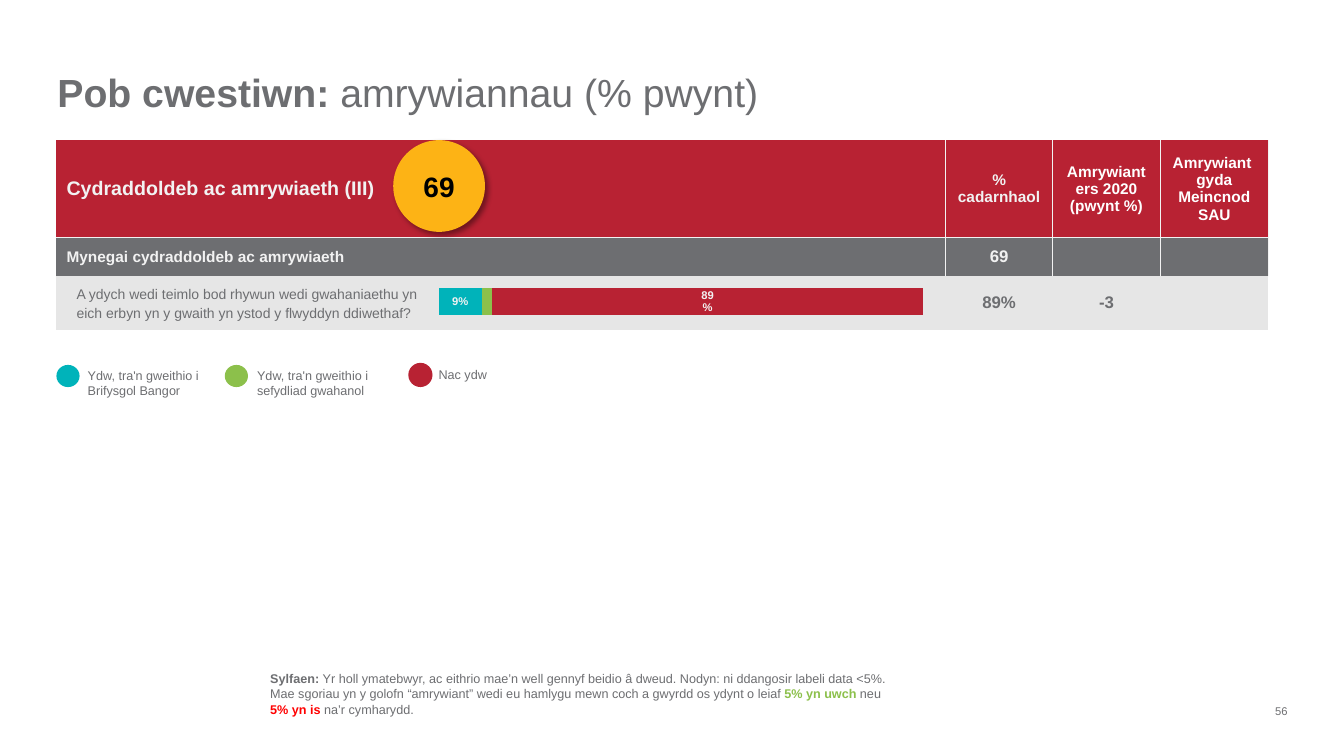
from dataclasses import dataclass

from lxml.etree import SubElement
from pptx import Presentation
from pptx.chart.data import CategoryChartData
from pptx.dml.color import RGBColor
from pptx.enum.chart import XL_CHART_TYPE as ChartType, XL_LABEL_POSITION as LabelPos
from pptx.enum.shapes import MSO_SHAPE as Shape
from pptx.enum.text import MSO_ANCHOR as Anchor, PP_ALIGN as Align
from pptx.oxml import parse_xml
from pptx.oxml.ns import nsdecls, qn
from pptx.util import Emu, Pt

PX = 9144  # 100 px to the inch
FONT = "Arial"
COLOURS = {
    "red": "B82233", "grey": "6D6E71", "pale": "E6E6E6", "light": "F2F2F2",
    "white": "FFFFFF", "black": "000000", "teal": "00B3BA", "green": "8CC04B",
    "amber": "FDB315", "alert": "FF0000",
}


@dataclass
class Box:
    x: int
    y: int
    w: int
    h: int

    def emu(self) -> tuple:
        return tuple(Emu(v * PX) for v in (self.x, self.y, self.w, self.h))


@dataclass
class Span:
    text: str
    size: float
    colour: str = "grey"
    bold: bool = False


@dataclass
class Row:
    height: int
    fill: str
    cells: list[Span]
    ruled: bool = True


@dataclass
class LegendItem:
    label: str
    colour: str
    dot: Box
    text: Box


@dataclass
class Series:
    name: str
    value: float
    colour: str
    labelled: bool = True


TABLE_BOX = Box(56, 139, 1202, 188)
COLUMNS = [882, 106, 107, 107]
ROWS = [
    Row(97, "red", [
        Span("Cydraddoldeb ac amrywiaeth (III)", 14, "light", True),
        Span("% cadarnhaol", 11, "light", True),
        Span("Amrywiant ers 2020 (pwynt %)", 11, "white", True),
        Span("Amrywiant \vgyda Meincnod SAU", 11, "white", True)]),
    Row(38, "grey", [
        Span("Mynegai cydraddoldeb ac amrywiaeth", 11, "light", True),
        Span("69", 12, "light", True), Span("", 12), Span("", 12)]),
    Row(53, "pale", [
        Span("A ydych wedi teimlo bod rhywun wedi gwahaniaethu yn\n"
             "eich erbyn yn y gwaith yn ystod y flwyddyn ddiwethaf?", 10),
        Span("89%", 12, bold=True), Span("-3", 12, bold=True), Span("", 12)], ruled=False),
]
LEGEND = [
    LegendItem("Ydw, tra'n gweithio i Brifysgol Bangor", "teal",
               Box(56, 362, 23, 22), Box(87, 365, 129, 30)),
    LegendItem("Ydw, tra'n gweithio i sefydliad gwahanol", "green",
               Box(223, 362, 23, 22), Box(255, 365, 135, 30)),
    LegendItem("Nac ydw", "red", Box(405, 360, 24, 24), Box(435, 364, 55, 15)),
]
ANSWERS = [
    Series("Series 1", 0.09, "teal"),
    Series("Series 2", 0.02, "green", labelled=False),
    Series("Series 3", 0.89, "red"),
]
TITLE = [Span("Pob cwestiwn: ", 28, bold=True), Span("amrywiannau (% pwynt)", 28)]
BASE_NOTE = [
    Span("Sylfaen: ", 9, bold=True),
    Span("Yr holl ymatebwyr, ac eithrio mae’n well gennyf beidio â dweud. Nodyn: ni ddangosir "
         "labeli data <5%. Mae sgoriau yn y golofn “amrywiant” wedi eu hamlygu mewn coch a "
         "gwyrdd os ydynt o leiaf ", 9),
    Span("5% yn uwch ", 9, "green", True), Span("neu ", 9),
    Span("5% yn is ", 9, "alert", True), Span("na’r cymharydd.", 9),
]


def rgb(name: str) -> RGBColor:
    return RGBColor.from_string(COLOURS[name])


def style_font(font, span: Span) -> None:
    font.name, font.size, font.bold = FONT, Pt(span.size), span.bold
    font.color.rgb = rgb(span.colour)


def write(tf, spans: list[Span], anchor=Anchor.TOP, align=Align.LEFT) -> None:
    """Fill a frame without margins with one paragraph of styled runs."""
    tf.word_wrap = True
    tf.vertical_anchor = anchor
    tf.margin_left = tf.margin_right = tf.margin_top = tf.margin_bottom = 0
    p = tf.paragraphs[0]
    p.alignment = align
    for span in spans:
        r = p.add_run()
        r.text = span.text
        style_font(r.font, span)


def add_text(s, box: Box, spans: list[Span], anchor=Anchor.TOP, align=Align.LEFT) -> None:
    write(s.shapes.add_textbox(*box.emu()).text_frame, spans, anchor, align)


def add_dot(s, box: Box, colour: str):
    sp = s.shapes.add_shape(Shape.OVAL, *box.emu())
    sp.shadow.inherit = False
    sp.fill.solid()
    sp.fill.fore_color.rgb = rgb(colour)
    sp.line.fill.background()
    return sp


def set_borders(cell, sides: str) -> None:
    """Draw light lines on the named sides (letters of LRTB) and none elsewhere."""
    tc_pr = cell._tc.get_or_add_tcPr()
    for side in "LRTB":
        ln = SubElement(tc_pr, qn(f"a:ln{side}"), w=str(Pt(1)))
        if side in sides:
            fill = SubElement(ln, qn("a:solidFill"))
            SubElement(fill, qn("a:srgbClr"), val=COLOURS["light"])
        else:
            SubElement(ln, qn("a:noFill"))


def add_results_table(s) -> None:
    table = s.shapes.add_table(len(ROWS), len(COLUMNS), *TABLE_BOX.emu()).table
    table.first_row = table.horz_banding = False
    for column, width in zip(table.columns, COLUMNS):
        column.width = Emu(width * PX)
    for i, row in enumerate(ROWS):
        table.rows[i].height = Emu(row.height * PX)
        for j, span in enumerate(row.cells):
            cell = table.cell(i, j)
            sides = ("LR" if j else "R") + ("T" if i else "B")
            set_borders(cell, sides if row.ruled else "")
            cell.fill.solid()
            cell.fill.fore_color.rgb = rgb(row.fill)
            cell.vertical_anchor = Anchor.MIDDLE
            cell.text_frame.text = span.text
            for p in cell.text_frame.paragraphs:
                p.alignment = Align.CENTER if j else Align.LEFT
                if not row.ruled and j == 0:
                    p.line_spacing = 1.2
                    p._p.get_or_add_pPr().set("marL", str(10 * PX))
                style_font(p.font, span)
                for r in p.runs:
                    style_font(r.font, span)


def add_answer_chart(s, box: Box) -> None:
    data = CategoryChartData(number_format="0%")
    data.categories = ["1"]
    for answer in ANSWERS:
        data.add_series(answer.name, [answer.value])
    chart = s.shapes.add_chart(ChartType.BAR_STACKED_100, *box.emu(), data).chart
    chart.has_legend = chart.has_title = False
    style_font(chart.font, Span("", 8, "white"))
    chart.category_axis.visible = chart.value_axis.visible = False
    chart.category_axis.reverse_order = True
    chart.value_axis.has_major_gridlines = False
    chart.value_axis.minimum_scale, chart.value_axis.maximum_scale = 0, 1
    plot = chart.plots[0]
    plot.gap_width, plot.overlap, plot.vary_by_categories = 100, 100, False
    for series, answer in zip(plot.series, ANSWERS):
        series.format.fill.solid()
        series.format.fill.fore_color.rgb = rgb(answer.colour)
        if answer.labelled:
            labels = series.data_labels
            labels.show_value, labels.position = True, LabelPos.CENTER
            labels.number_format, labels.number_format_is_linked = "0%", False
            style_font(labels.font, Span("", 8, "light", True))
    area = chart._chartSpace.find(".//" + qn("c:plotArea"))
    for old in area.findall(qn("c:layout")):
        area.remove(old)
    area.insert(0, parse_xml(
        f'<c:layout {nsdecls("c")}><c:manualLayout><c:layoutTarget val="inner"/>'
        '<c:xMode val="edge"/><c:yMode val="edge"/><c:x val="0"/><c:y val="0"/>'
        '<c:w val="1"/><c:h val="1"/></c:manualLayout></c:layout>'))


def add_score(s, box: Box) -> None:
    sp = add_dot(s, box, "amber")
    effects = sp._element.spPr.find(qn("a:effectLst"))
    shadow = SubElement(effects, qn("a:outerShdw"), blurRad=str(Pt(4)), dist=str(Pt(3)),
                        dir=str(45 * 60000), algn="tl", rotWithShape="0")
    colour = SubElement(shadow, qn("a:srgbClr"), val=COLOURS["black"])
    SubElement(colour, qn("a:alpha"), val="40000")
    write(sp.text_frame, [Span("69", 20, "black", True)], Anchor.MIDDLE, Align.CENTER)


def main() -> None:
    prs = Presentation()
    prs.slide_width, prs.slide_height = Emu(1333 * PX), Emu(750 * PX)
    s = prs.slides.add_slide(prs.slide_layouts[5])
    title = s.shapes.title
    title.left, title.top, title.width, title.height = Box(57, 68, 1110, 47).emu()
    write(title.text_frame, TITLE)
    add_text(s, Box(1238, 699, 39, 13), [Span("56", 8)], Anchor.BOTTOM, Align.RIGHT)
    add_results_table(s)
    for item in LEGEND:
        add_dot(s, item.dot, item.colour)
        add_text(s, item.text, [Span(item.label, 9)])
    add_text(s, Box(268, 680, 611, 31), BASE_NOTE, Anchor.BOTTOM)
    add_answer_chart(s, Box(435, 272, 481, 54))
    add_score(s, Box(390, 139, 91, 91))
    prs.save("out.pptx")


if __name__ == "__main__":
    main()
